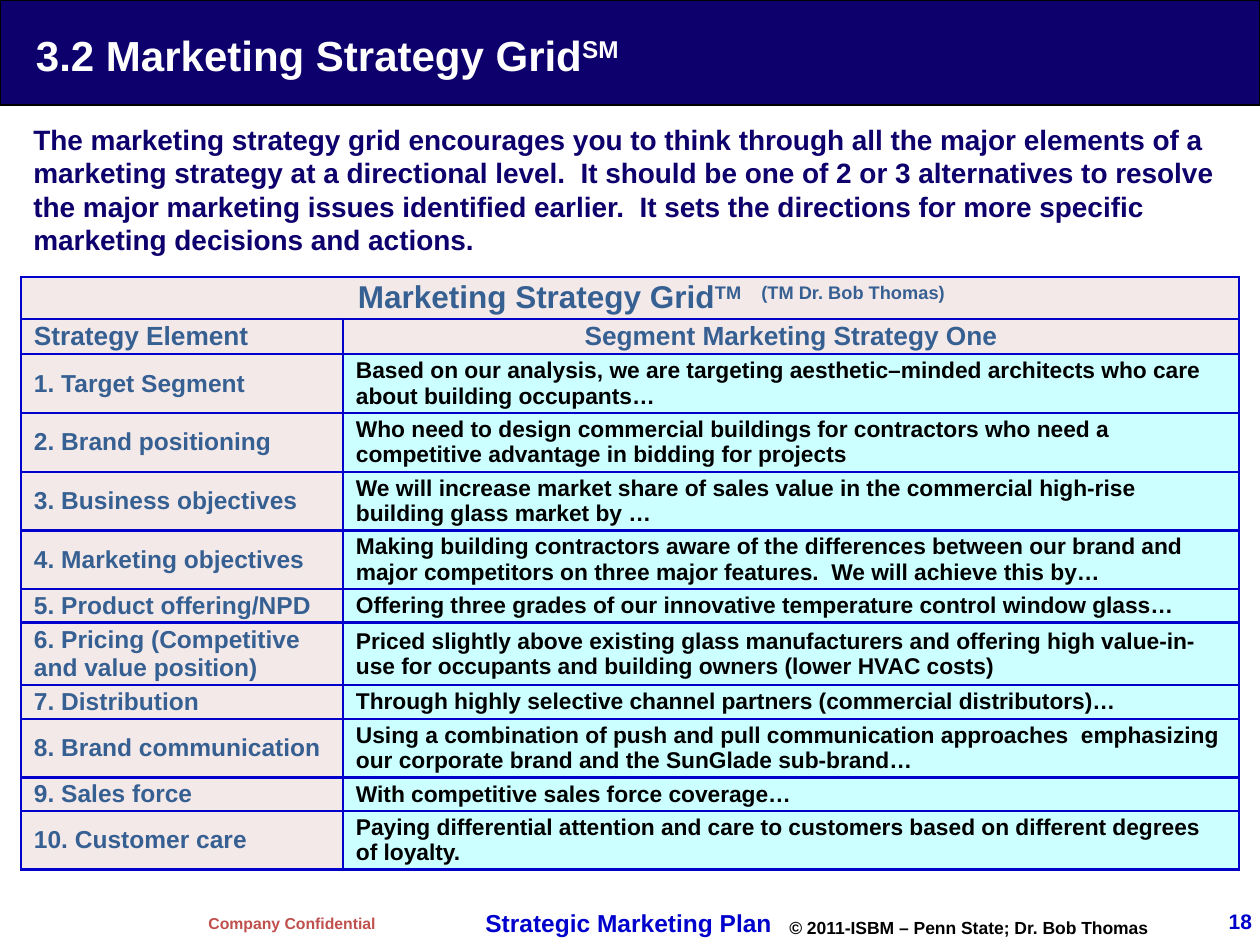
from dataclasses import dataclass
from typing import Optional

from lxml.etree import SubElement
from pptx import Presentation
from pptx.dml.color import RGBColor
from pptx.enum.shapes import MSO_SHAPE
from pptx.enum.text import MSO_ANCHOR, MSO_AUTO_SIZE, PP_ALIGN
from pptx.oxml.ns import qn
from pptx.util import Emu, Pt

NAVY = RGBColor(0x0D, 0x00, 0x6C)
BLUE = RGBColor(0x00, 0x00, 0xCC)
STEEL = RGBColor(0x37, 0x60, 0x92)
RED = RGBColor(0xC0, 0x50, 0x4D)
BLACK = RGBColor(0x00, 0x00, 0x00)
WHITE = RGBColor(0xFF, 0xFF, 0xFF)
ROSE = RGBColor(0xF4, 0xE9, 0xE9)
AQUA = RGBColor(0xCC, 0xFF, 0xFF)

PX_PER_INCH = 126


@dataclass(frozen=True)
class Element:
    name: str
    strategy: str
    height: int


@dataclass(frozen=True)
class Label:
    text: str
    box: tuple[int, int, int, int]
    size: int
    color: RGBColor
    wrap: bool = True
    right: bool = False


ELEMENTS = [
    Element("1. Target Segment", "Based on our analysis, we are targeting aesthetic–minded "
            "architects who care about building occupants…", 56),
    Element("2. Brand positioning", "Who need to design commercial buildings for contractors "
            "who need a competitive advantage in bidding for projects", 56),
    Element("3. Business objectives", "We will increase market share of sales value in the "
            "commercial high-rise building glass market by …", 56),
    Element("4. Marketing objectives", "Making building contractors aware of the differences "
            "between our brand and major competitors on three major features.  "
            "We will achieve this by…", 56),
    Element("5. Product offering/NPD", "Offering three grades of our innovative temperature "
            "control window glass…", 33),
    Element("6. Pricing (Competitive and value position)", "Priced slightly above existing "
            "glass manufacturers and offering high value-in-use for occupants and building "
            "owners (lower HVAC costs)", 60),
    Element("7. Distribution", "Through highly selective channel partners "
            "(commercial distributors)…", 32),
    Element("8. Brand communication", "Using a combination of push and pull communication "
            "approaches  emphasizing our corporate brand and the SunGlade sub-brand…", 56),
    Element("9. Sales force", "With competitive sales force coverage…", 33),
    Element("10. Customer care", "Paying differential attention and care to customers based "
            "on different degrees of loyalty.", 56),
]

LABELS = [
    Label("Company Confidential", (196, 908, 193, 32), 9, RED, wrap=False),
    Label("Strategic Marketing Plan", (473, 902, 314, 43), 14, BLUE, wrap=False),
    Label("© 2011-ISBM – Penn State; Dr. Bob Thomas", (777, 911, 431, 34), 10, BLACK),
    Label("18", (1134, 902, 118, 38), 12, BLUE, right=True),
    Label("The marketing strategy grid encourages you to think through all the major elements "
          "of a marketing strategy at a directional level.  It should be one of 2 or 3 "
          "alternatives to resolve the major marketing issues identified earlier.  It sets "
          "the directions for more specific marketing decisions and actions.",
          (21, 116, 1218, 168), 16, NAVY),
]


def px(length: int) -> Emu:
    return Emu(round(length * 914400 / PX_PER_INCH))


def write(paragraph, text: str, *, size: int, color: RGBColor, raised: bool = False,
          spacing: Optional[int] = None, align=PP_ALIGN.LEFT) -> None:
    """Append one bold run; spacing is in hundredths of a point."""
    paragraph.alignment = align
    run = paragraph.add_run()
    run.text = text
    run.font.name = "Arial"
    run.font.size = Pt(size)
    run.font.bold = True
    run.font.color.rgb = color
    properties = run.font._element
    if raised:
        properties.set("baseline", "30000")
    if spacing is not None:
        properties.set("spc", str(spacing))


def add_label(slide, label: Label) -> None:
    frame = slide.shapes.add_textbox(*map(px, label.box)).text_frame
    frame.word_wrap = label.wrap
    if label.right:
        frame.margin_left = frame.margin_right = 0
        frame.margin_top = frame.margin_bottom = 0
        frame.vertical_anchor = MSO_ANCHOR.MIDDLE
    write(frame.paragraphs[0], label.text, size=label.size, color=label.color,
          align=PP_ALIGN.RIGHT if label.right else PP_ALIGN.LEFT)


def style_cell(cell, fill: RGBColor):
    """Fill and border a cell, and return its paragraph."""
    cell.margin_left = cell.margin_right = px(13)
    cell.margin_top = cell.margin_bottom = px(2)
    cell.vertical_anchor = MSO_ANCHOR.MIDDLE
    properties = cell._tc.get_or_add_tcPr()
    for side in ("a:lnL", "a:lnR", "a:lnT", "a:lnB"):
        border = SubElement(properties, qn(side), w=str(Pt(1.5)))
        color = SubElement(SubElement(border, qn("a:solidFill")), qn("a:srgbClr"))
        color.set("val", str(BLUE))
    cell.fill.solid()
    cell.fill.fore_color.rgb = fill
    return cell.text_frame.paragraphs[0]


def add_header(slide) -> None:
    band = slide.shapes.add_shape(MSO_SHAPE.RECTANGLE, 0, 0, px(1260), px(105))
    band.shadow.inherit = False
    band.fill.solid()
    band.fill.fore_color.rgb = NAVY
    band.line.color.rgb = BLACK
    band.line.width = Pt(0.75)

    title = slide.shapes.title
    title.left, title.top, title.width, title.height = map(px, (21, 4, 1218, 101))
    # Bring the title in front of the band
    band._element.addnext(title._element)
    frame = title.text_frame
    frame.auto_size = MSO_AUTO_SIZE.NONE
    frame.vertical_anchor = MSO_ANCHOR.MIDDLE
    frame.margin_left = px(15)
    frame.margin_right = frame.margin_top = frame.margin_bottom = 0
    heading = frame.paragraphs[0]
    write(heading, "3.2 Marketing Strategy Grid", size=24, color=WHITE)
    write(heading, "SM", size=24, color=WHITE, raised=True)


def add_grid(slide) -> None:
    heights = [41, 34] + [element.height for element in ELEMENTS]
    grid = slide.shapes.add_table(len(heights), 2, px(21), px(277), px(1218),
                                  px(sum(heights))).table
    for column, width in zip(grid.columns, (322, 896)):
        column.width = px(width)
    for row, height in zip(grid.rows, heights):
        row.height = px(height)

    # Merged heading row, nudged right of centre
    heading_cell = grid.cell(0, 0)
    heading_cell.merge(grid.cell(0, 1))
    style_cell(grid.cell(0, 1), ROSE)
    heading = style_cell(heading_cell, ROSE)
    heading_cell.margin_left = px(56)
    look = dict(size=18, color=STEEL, align=PP_ALIGN.CENTER)
    write(heading, "Marketing Strategy Grid", **look)
    write(heading, "TM", raised=True, **look)
    write(heading, " ", raised=True, spacing=850, **look)
    write(heading, "(TM Dr. Bob Thomas)", raised=True, **look)

    # Column headings
    write(style_cell(grid.cell(1, 0), ROSE), "Strategy Element", size=15, color=STEEL)
    write(style_cell(grid.cell(1, 1), ROSE), "Segment Marketing Strategy One",
          size=15, color=STEEL, align=PP_ALIGN.CENTER)

    # One row for each strategy element
    for row, element in enumerate(ELEMENTS, start=2):
        write(style_cell(grid.cell(row, 0), ROSE), element.name, size=14, color=STEEL)
        write(style_cell(grid.cell(row, 1), AQUA), element.strategy, size=13, color=BLACK)


def main() -> None:
    deck = Presentation()
    deck.slide_width, deck.slide_height = px(1260), px(945)
    slide = deck.slides.add_slide(deck.slide_layouts[5])
    add_header(slide)
    for label in LABELS:
        add_label(slide, label)
    add_grid(slide)
    deck.save("out.pptx")


if __name__ == "__main__":
    main()
